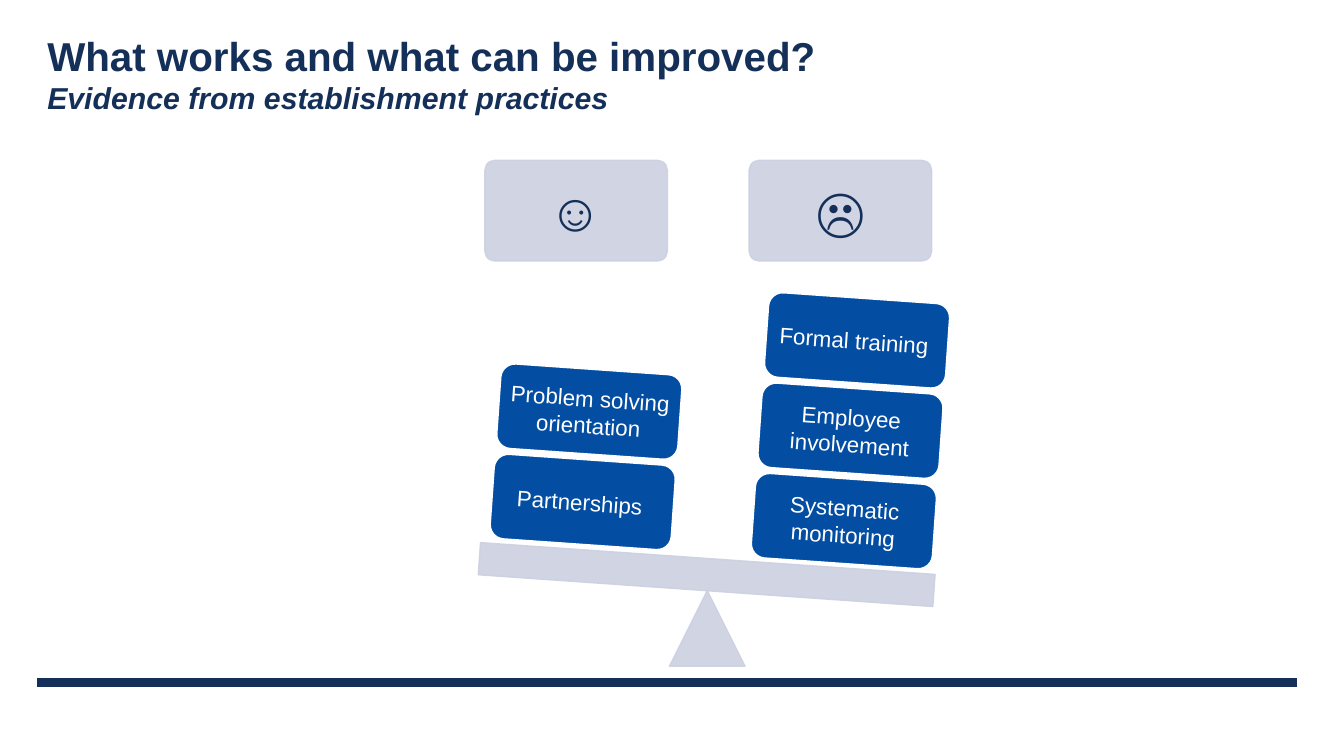
from lxml import etree
from pptx import Presentation, util as u
from pptx.dml.color import RGBColor
from pptx.enum import shapes, text
from pptx.oxml import ns

NAVY, BLUE, PALE, WHITE = "143058", "034EA2", "CCD0E0", "FFFFFF"
TILT = 4  # degrees

deck = Presentation()
deck.slide_width, deck.slide_height = u.Inches(13.33), u.Inches(7.5)
page = deck.slides.add_slide(deck.slide_layouts[6])


def share(left, top, width, height):
    """Turn percentages of the slide into lengths."""
    across, down = deck.slide_width / 100, deck.slide_height / 100
    return [int(n) for n in (left * across, top * down, width * across, height * down)]


def add_piece(kind, place, color, edge, alpha=100, words="", size=16, ink=WHITE, inset=0.07):
    piece = page.shapes.add_shape(kind, *share(*place))
    piece.shadow.inherit = False
    piece.fill.solid()
    piece.line.width = u.Pt(1)
    for paint, shade in ((piece.fill, color), (piece.line.fill, edge)):
        paint.solid()
        paint.fore_color.rgb = RGBColor.from_string(shade)
    if alpha < 100:
        for tone in piece._element.spPr.iter(ns.qn("a:srgbClr")):
            etree.SubElement(tone, ns.qn("a:alpha")).set("val", str(alpha * 1000))
    if words:
        frame = piece.text_frame
        frame.word_wrap = True
        frame.vertical_anchor = text.MSO_ANCHOR.MIDDLE
        frame.margin_left = frame.margin_right = u.Inches(inset)
        frame.margin_top = frame.margin_bottom = u.Inches(inset)
        para = frame.paragraphs[0]
        para.alignment = text.PP_ALIGN.CENTER
        span = para.add_run()
        span.text = words
        span.font.name, span.font.size = "Arial", u.Pt(size)
        span.font.color.rgb = RGBColor.from_string(ink)
    return piece


# Footer rule
left, top, width, _ = share(2.78, 90.27, 93.7, 0)
rule = page.shapes.add_connector(shapes.MSO_CONNECTOR.STRAIGHT, left, top, left + width, top)
rule.line.width = u.Pt(6)
rule.line.color.rgb = RGBColor.from_string(NAVY)
etree.SubElement(rule._element.spPr, ns.qn("a:effectLst"))

# Title and subtitle
box = page.shapes.add_textbox(*share(2.78, 4, 93.7, 11.33))
box.text_frame.word_wrap = True
box.text_frame.vertical_anchor = text.MSO_ANCHOR.MIDDLE
para = box.text_frame.paragraphs[0]
for words, size, italic in (
    ("What works and what can be improved?", 28.8, False),
    ("Evidence from establishment practices", 21.6, True),
):
    if italic:
        para.add_line_break()
    span = para.add_run()
    span.text = words
    span.font.name, span.font.size = "Arial", u.Pt(size)
    span.font.bold, span.font.italic = True, italic
    span.font.color.rgb = RGBColor.from_string(NAVY)

# Faces above the two sides
for left, face in ((36.08, "☺"), (55.74, "☹")):
    card = add_piece(shapes.MSO_SHAPE.ROUNDED_RECTANGLE, (left, 21.2, 13.58, 13.33),
                     PALE, PALE, 90, face, 38, NAVY, 0.16)
    card.adjustments[0] = 0.1

# Pivot and tilted beam
add_piece(shapes.MSO_SHAPE.ISOSCELES_TRIANGLE, (49.81, 78.13, 5.63, 10), PALE, PALE, 90)
beam = add_piece(shapes.MSO_SHAPE.RECTANGLE, (35.63, 73.87, 33.91, 4.27), PALE, PALE, 90)
beam.rotation = TILT

# Stacked weights, from the beam upwards
stacks = (
    (56.04, 63.33, ("Systematic monitoring", "Employee involvement", "Formal training ")),
    (36.61, 60.8, ("Partnerships ", "Problem solving orientation")),
)
for left, top, weights in stacks:
    for level, words in enumerate(weights):
        place = (left + level * 0.49, top - level * 11.95, 13.5, 11.2)
        weight = add_piece(shapes.MSO_SHAPE.ROUNDED_RECTANGLE, place, BLUE, WHITE, words=words)
        weight.rotation = TILT

deck.save("out.pptx")
